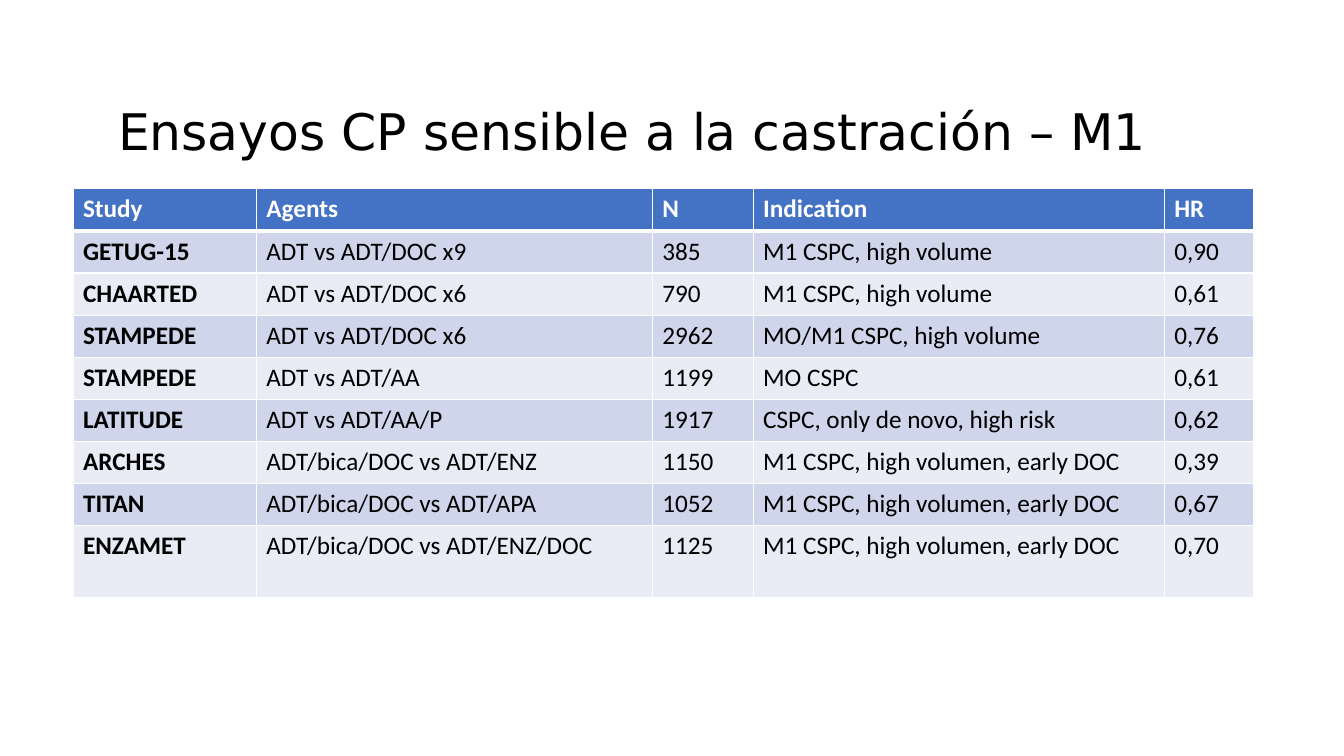
from pptx import Presentation
from pptx.dml.color import RGBColor
from pptx.enum.text import MSO_ANCHOR, PP_ALIGN
from pptx.oxml import parse_xml
from pptx.oxml.ns import nsdecls
from pptx.util import Cm, Pt

COLORS = {
    "white": "FFFFFF",
    "black": "000000",
    "header": "4472C4",
    "odd_row": "CFD5EA",
    "even_row": "E9EBF5",
}
COLUMN_WIDTHS = [4.62, 9.98, 2.54, 10.36, 2.26]
ROW_HEIGHT, LAST_ROW_HEIGHT = 1.06, 1.83
TRIALS = [
    ["Study", "Agents", "N", "Indication", "HR"],
    ["GETUG-15", "ADT vs ADT/DOC x9", "385", "M1 CSPC, high volume", "0,90"],
    ["CHAARTED", "ADT vs ADT/DOC x6", "790", "M1 CSPC, high volume", "0,61"],
    ["STAMPEDE", "ADT vs ADT/DOC x6", "2962", "MO/M1 CSPC, high volume", "0,76"],
    ["STAMPEDE", "ADT vs ADT/AA", "1199", "MO CSPC", "0,61"],
    ["LATITUDE", "ADT vs ADT/AA/P", "1917", "CSPC, only de novo, high risk", "0,62"],
    ["ARCHES", "ADT/bica/DOC vs ADT/ENZ", "1150", "M1 CSPC, high volumen, early DOC", "0,39"],
    ["TITAN", "ADT/bica/DOC vs ADT/APA", "1052", "M1 CSPC, high volumen, early DOC", "0,67"],
    ["ENZAMET", "ADT/bica/DOC vs ADT/ENZ/DOC", "1125", "M1 CSPC, high volumen, early DOC", "0,70"],
]


class TrialPage:
    """Holds the text style and the current slide."""

    def __init__(self, page):
        self.page = page
        self.title_font = {"name": "DejaVu Sans", "size": Pt(36), "bold": False}
        self.table_font = {"name": "Calibri", "size": Pt(18)}

    def format_font(self, font, color, **values):
        for name, value in values.items():
            setattr(font, name, value)
        font.color.rgb = RGBColor.from_string(COLORS[color])

    def title(self, text, left, top, width, height):
        box = self.page.shapes.title
        place = {"left": left, "top": top, "width": width, "height": height}
        for name, value in place.items():
            setattr(box, name, Cm(value))
        frame = box.text_frame
        frame.text = text
        frame.word_wrap = True
        frame.vertical_anchor = MSO_ANCHOR.MIDDLE
        para = frame.paragraphs[0]
        para.alignment = PP_ALIGN.LEFT
        para.line_spacing = 0.9
        self.format_font(para.runs[0].font, "black", **self.title_font)

    def border(self, cell, side, points):
        cell._tc.get_or_add_tcPr().append(parse_xml(
            f'<a:ln{side} {nsdecls("a")} w="{Pt(points)}"><a:solidFill>'
            f'<a:srgbClr val="{COLORS["white"]}"/></a:solidFill></a:ln{side}>'))

    def cell(self, cell, text, row, column):
        is_header = row == 0
        widths = {"L": 1, "R": 1, "T": 3 if row == 1 else 1, "B": 3 if is_header else 1}
        for side, points in widths.items():
            self.border(cell, side, points)
        fill = "header" if is_header else "odd_row" if row % 2 else "even_row"
        cell.fill.solid()
        cell.fill.fore_color.rgb = RGBColor.from_string(COLORS[fill])
        cell.text = text
        self.format_font(cell.text_frame.paragraphs[0].runs[0].font,
                         "white" if is_header else "black",
                         bold=is_header or column == 0, **self.table_font)

    def table(self, rows, left, top):
        heights = [ROW_HEIGHT] * (len(rows) - 1) + [LAST_ROW_HEIGHT]
        table = self.page.shapes.add_table(
            len(rows), len(COLUMN_WIDTHS), Cm(left), Cm(top),
            Cm(sum(COLUMN_WIDTHS)), Cm(sum(heights))).table
        table.first_col = True
        for column, width in zip(table.columns, COLUMN_WIDTHS):
            column.width = Cm(width)
        for row, height in zip(table.rows, heights):
            row.height = Cm(height)
        for row, texts in enumerate(rows):
            for column, text in enumerate(texts):
                self.cell(table.cell(row, column), text, row, column)


def main():
    deck = Presentation()
    deck.slide_width, deck.slide_height = Cm(33.87), Cm(19.05)
    trial_page = TrialPage(deck.slides.add_slide(deck.slide_layouts[5]))
    trial_page.title("Ensayos CP sensible a la castración – M1", 2.72, 1.55, 29.21, 3.68)
    trial_page.table(TRIALS, 1.84, 4.76)
    deck.save("out.pptx")


if __name__ == "__main__":
    main()
